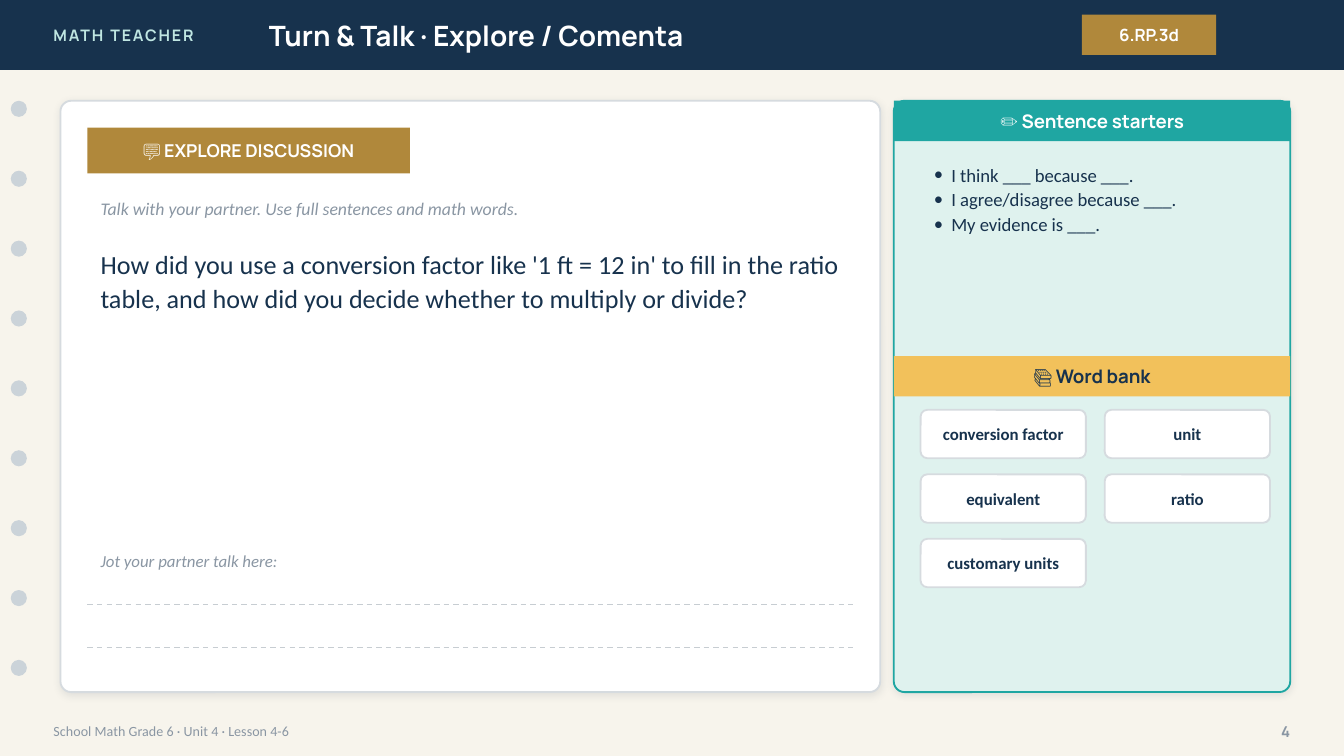
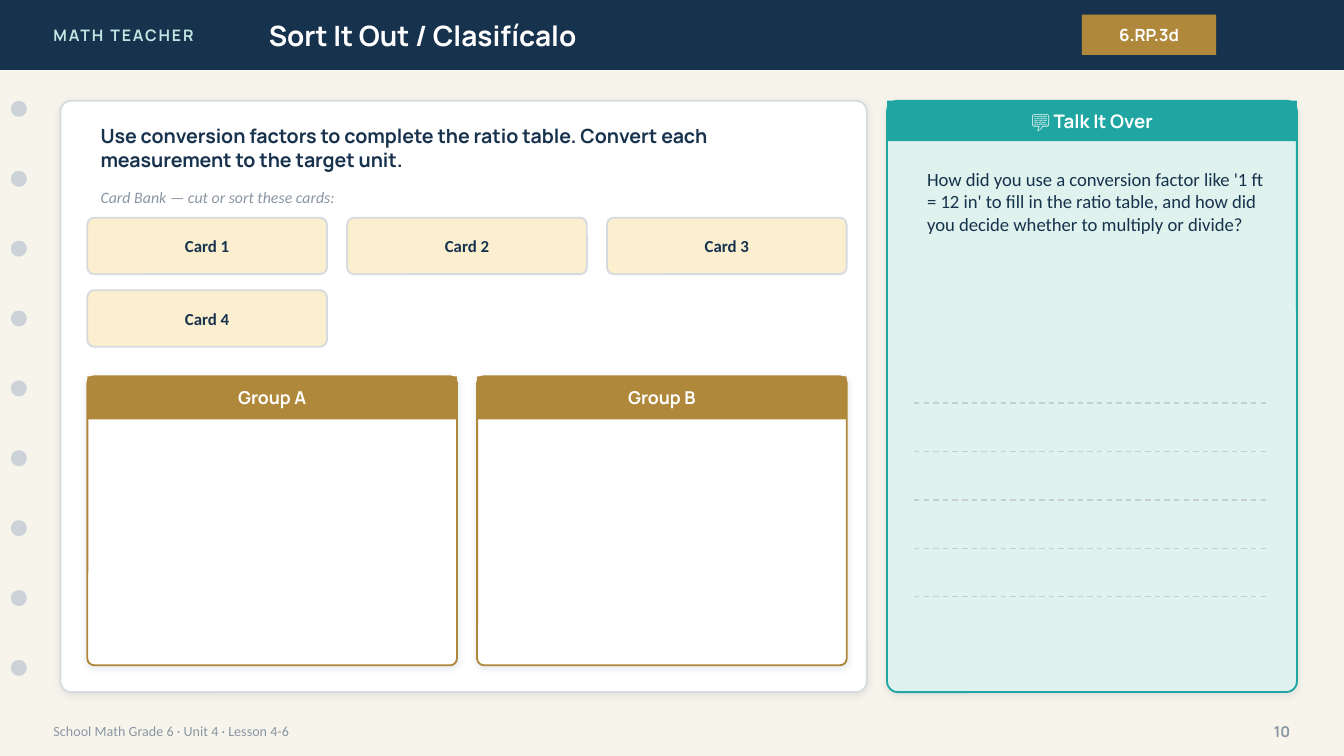
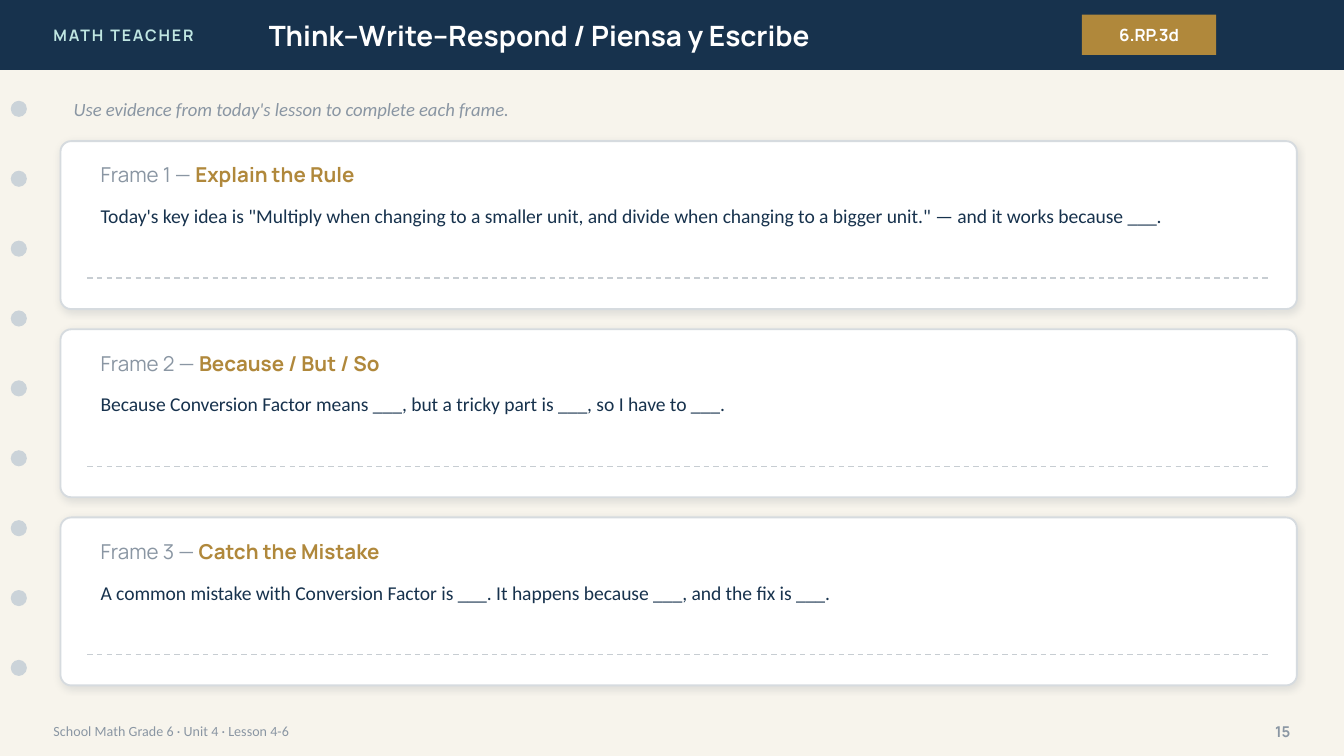
from dataclasses import dataclass, replace

from lxml import etree
from pptx import Presentation
from pptx import util as u
from pptx.dml.color import RGBColor
from pptx.enum import dml, shapes, text
from pptx.oxml import ns

PX = 9144
WIDTH = 1000
LEFT, CENTER, RIGHT = text.PP_ALIGN.LEFT, text.PP_ALIGN.CENTER, text.PP_ALIGN.RIGHT
TOP, MIDDLE = text.MSO_ANCHOR.TOP, text.MSO_ANCHOR.MIDDLE


@dataclass(frozen=True)
class Style:
    size: float
    color: str
    font: str = "Calibri"
    bold: bool = False
    italic: bool = False


class Theme:
    cream, white, navy = "F7F4EC", "FFFFFF", "17324D"
    gold, amber, card = "B0883B", "F2C15B", "FBEFD0"
    teal, mint, aqua = "1FA6A2", "DFF2EE", "BFE6E2"
    grey, border, rule, hole = "8A96A3", "D6DBDF", "C7CDD2", "CBD3D9"
    shadow = "1C2E42"

    brand = Style(8.5, aqua, "Manrope", bold=True)
    title = Style(15, white, "Manrope", bold=True)
    standard = Style(9, white, "Manrope", bold=True)
    header = Style(10, white, "Manrope", bold=True)
    dark_header = replace(header, color=navy)
    tag = replace(header, size=9.5)
    task = replace(dark_header, size=10.5)
    frame = Style(11, grey, "Manrope")
    frame_name = replace(frame, color=gold, bold=True)
    question = Style(14, navy)
    body = Style(10, navy)
    prompt = replace(body, size=10.5)
    chip = Style(9, navy, bold=True)
    footer = Style(7.5, grey)
    page = Style(8, grey, "Manrope", bold=True)
    hint = Style(9.5, grey, italic=True)
    jot_hint = replace(hint, size=9)
    card_hint = replace(hint, size=8.5)
    frame_hint = replace(hint, size=10)


T = Theme
QUESTION = ("How did you use a conversion factor like '1 ft = 12 in' to fill in the ratio table, "
            "and how did you decide whether to multiply or divide?")


def px(*lengths):
    return [round(n * PX) for n in lengths]


def rgb(color):
    return RGBColor.from_string(color)


def add_xml(parent, tag, **attrs):
    return etree.SubElement(parent, ns.qn(tag), attrs)


def format_run(r, style):
    f = r.font
    f.size, f.name, f.bold, f.italic = u.Pt(style.size), style.font, style.bold, style.italic
    f.color.rgb = rgb(style.color)


def write(tf, content, style, align=LEFT, anchor=MIDDLE, spacing=None):
    tf.text = content
    tf.word_wrap = True
    tf.auto_size = text.MSO_AUTO_SIZE.NONE
    tf.vertical_anchor = anchor
    for p in tf.paragraphs:
        p.alignment = align
        if spacing:
            p.line_spacing = spacing
        for r in p.runs:
            format_run(r, style)


def add_text(s, box, content, style, **layout):
    tf = s.shapes.add_textbox(*px(*box)).text_frame
    write(tf, content, style, **layout)
    return tf


def add_shape(s, kind, box, fill, line=None):
    sp = s.shapes.add_shape(kind, *px(*box))
    sp.shadow.inherit = False
    sp.fill.solid()
    sp.fill.fore_color.rgb = rgb(fill)
    if line:
        sp.line.color.rgb = rgb(line)
        sp.line.width = u.Pt(1)
    else:
        sp.line.fill.background()
    return sp


def add_bar(s, box, fill, content=None, style=None):
    sp = add_shape(s, shapes.MSO_SHAPE.RECTANGLE, box, fill)
    if content:
        write(sp.text_frame, content, style, align=CENTER)


def add_rounded(s, box, fill, line, radius):
    sp = add_shape(s, shapes.MSO_SHAPE.ROUNDED_RECTANGLE, box, fill, line)
    sp.adjustments[0] = radius / min(box[2:])
    return sp


def add_panel(s, box, fill=T.white, line=T.border, radius=8):
    sp = add_rounded(s, box, fill, line, radius)
    effects = sp._element.spPr.find(ns.qn("a:effectLst"))
    shadow = add_xml(effects, "a:outerShdw", blurRad=str(u.Pt(4)), dist=str(u.Pt(1)),
                     dir="5400000", algn="bl", rotWithShape="0")
    color = add_xml(shadow, "a:srgbClr", val=T.shadow)
    add_xml(color, "a:alpha", val="10000")


def add_chips(s, words, left, top, size, step, columns, fill):
    for i, word in enumerate(words):
        row, col = divmod(i, columns)
        box = (left + col * step[0], top + row * step[1], *size)
        sp = add_rounded(s, box, fill, T.border, 5)
        write(sp.text_frame, word, T.chip, align=CENTER)


def add_writing_line(s, left, right, y):
    ln = s.shapes.add_connector(shapes.MSO_CONNECTOR.STRAIGHT, *px(left, y, right, y))
    ln.line.color.rgb = rgb(T.rule)
    ln.line.width = u.Pt(0.75)
    ln.line.dash_style = dml.MSO_LINE.DASH
    add_xml(ln._element.spPr, "a:effectLst")


def add_bullets(s, box, items, style, spacing):
    tf = add_text(s, box, "\n".join(items), style, anchor=TOP, spacing=spacing)
    indent = px(13)[0]
    for p in tf.paragraphs:
        pPr = p._p.get_or_add_pPr()
        pPr.set("marL", str(indent))
        pPr.set("indent", str(-indent))
        add_xml(pPr, "a:buFont", typeface=style.font)
        add_xml(pPr, "a:buChar", char="•")


def add_lesson_slide(prs, title, page):
    s = prs.slides.add_slide(prs.slide_layouts[5])
    add_bar(s, (0, 0, WIDTH, 52), T.navy)
    tf = add_text(s, (30, 0, 240, 52), "MATH TEACHER", T.brand)
    tf.paragraphs[0].runs[0]._r.get_or_add_rPr().set("spc", "100")
    sp = s.shapes.title
    sp.left, sp.top, sp.width, sp.height = px(190, 0, 560, 52)
    write(sp.text_frame, title, T.title)
    s.shapes._spTree.append(sp._element)
    add_bar(s, (805, 11, 100, 30), T.gold, "6.RP.3d", T.standard)
    for i in range(9):
        add_shape(s, shapes.MSO_SHAPE.OVAL, (8, 75 + 52 * i, 12, 12), T.hole)
    add_text(s, (30, 530, 700, 28), "School Math Grade 6 · Unit 4 · Lesson 4-6", T.footer)
    add_text(s, (920, 530, 50, 28), str(page), T.page, align=RIGHT)
    return s


def build_turn_and_talk(prs):
    s = add_lesson_slide(prs, "Turn & Talk · Explore / Comenta", 4)
    add_panel(s, (45, 75, 610, 440))
    add_bar(s, (65, 95, 240, 34), T.gold, "💬 EXPLORE DISCUSSION", T.tag)
    add_text(s, (65, 140, 570, 30),
             "Talk with your partner. Use full sentences and math words.", T.hint)
    add_text(s, (65, 178, 570, 200), QUESTION, T.question, anchor=TOP, spacing=1.08)
    add_text(s, (65, 405, 570, 25), "Jot your partner talk here:", T.jot_hint)
    for y in (450, 482):
        add_writing_line(s, 65, 635, y)

    add_panel(s, (665, 75, 295, 440), T.mint, T.teal)
    add_bar(s, (665, 75, 295, 30), T.teal, "✏️ Sentence starters", T.header)
    starters = ["I think ___ because ___.", "I agree/disagree because ___.", "My evidence is ___."]
    add_bullets(s, (685, 115, 260, 140), starters, T.body, 1.1)
    add_bar(s, (665, 265, 295, 30), T.amber, "📚 Word bank", T.dark_header)
    words = ["conversion factor", "unit", "equivalent", "ratio", "customary units"]
    add_chips(s, words, 685, 305, (123, 36), (137, 48), 2, T.white)


def build_sort(prs):
    s = add_lesson_slide(prs, "Sort It Out / Clasifícalo", 10)
    add_panel(s, (45, 75, 600, 440))
    add_text(s, (65, 90, 560, 40), "Use conversion factors to complete the ratio table. "
             "Convert each measurement to the target unit.", T.task)
    add_text(s, (65, 135, 560, 24), "Card Bank — cut or sort these cards:", T.card_hint)
    cards = [f"Card {n}" for n in range(1, 5)]
    gap = 15
    card_width = (565 - 2 * gap) / 3
    add_chips(s, cards, 65, 162, (card_width, 42), (card_width + gap, 54), 3, T.card)
    for i, group in enumerate(("Group A", "Group B")):
        left = 65 + 290 * i
        add_panel(s, (left, 280, 275, 215), line=T.gold, radius=5)
        add_bar(s, (left, 280, 275, 32), T.gold, group, T.tag)

    add_panel(s, (660, 75, 305, 440), T.mint, T.teal)
    add_bar(s, (660, 75, 305, 30), T.teal, "💬 Talk It Over", T.header)
    add_text(s, (680, 120, 270, 150), QUESTION, T.body, anchor=TOP)
    for i in range(5):
        add_writing_line(s, 680, 945, 300 + 36 * i)


def build_frames(prs):
    s = add_lesson_slide(prs, "Think–Write–Respond / Piensa y Escribe", 15)
    add_text(s, (45, 66, 920, 30), "Use evidence from today's lesson to complete each frame.",
             T.frame_hint)
    frames = [
        ("Explain the Rule", "Today's key idea is \"Multiply when changing to a smaller unit, and "
         "divide when changing to a bigger unit.\" — and it works because ___."),
        ("Because / But / So", "Because Conversion Factor means ___, but a tricky part is ___, "
         "so I have to ___."),
        ("Catch the Mistake", "A common mistake with Conversion Factor is ___. "
         "It happens because ___, and the fix is ___."),
    ]
    for i, (name, prompt) in enumerate(frames):
        top = 105 + 140 * i
        add_panel(s, (45, top, 920, 125))
        tf = add_text(s, (65, top + 10, 880, 30), f"Frame {i + 1} — ", T.frame)
        r = tf.paragraphs[0].add_run()
        r.text = name
        format_run(r, T.frame_name)
        add_text(s, (65, top + 42, 880, 40), prompt, T.prompt, anchor=TOP)
        add_writing_line(s, 65, 945, top + 102)


def main():
    prs = Presentation()
    prs.slide_width, prs.slide_height = px(WIDTH, WIDTH * 9 / 16)
    fill = prs.slide_master.background.fill
    fill.solid()
    fill.fore_color.rgb = rgb(T.cream)
    build_turn_and_talk(prs)
    build_sort(prs)
    build_frames(prs)
    prs.save("out.pptx")


if __name__ == "__main__":
    main()
